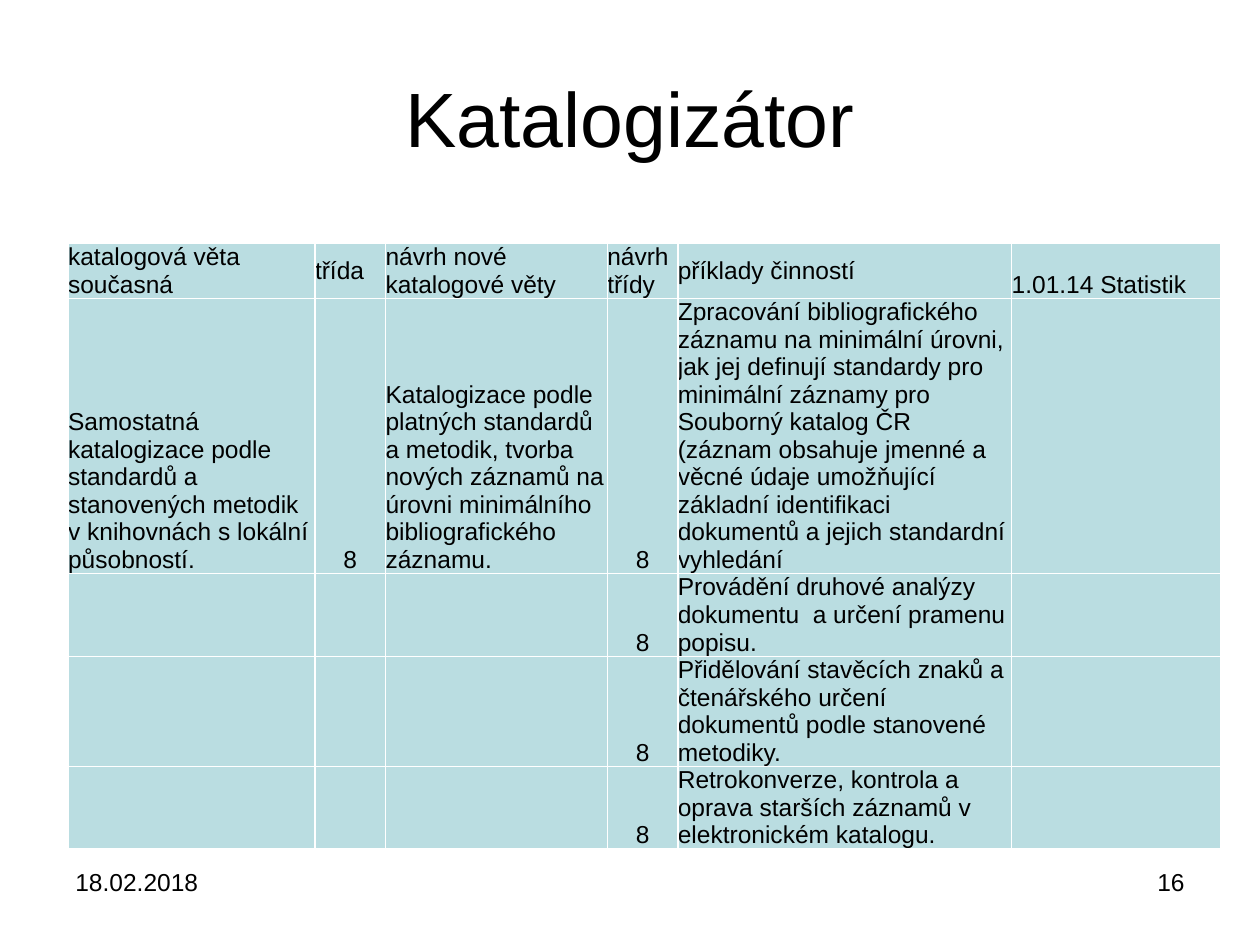
import pptx
import pptx.util
import pptx.dml.color
import pptx.enum.text
import pptx.oxml
import pptx.oxml.ns

Inches = pptx.util.Inches
ALIGN = pptx.enum.text.PP_ALIGN
ANCHOR = pptx.enum.text.MSO_ANCHOR

COLORS = {"text": "000000", "cell": "BADDE1", "border": "FFFFFF"}
FONT = "Arial"
COL_WIDTHS = [1.96, 0.56, 1.76, 0.56, 2.65, 1.66]
ROW_HEIGHTS = [0.43, 1.74, 0.65, 0.65, 0.65]
CLASS_COLS = (1, 3)
ROWS = [
    ["katalogová věta současná", "třída", "návrh nové katalogové věty",
     "návrh třídy", "příklady činností", "1.01.14 Statistik"],
    ["Samostatná katalogizace podle standardů a stanovených metodik "
     "v knihovnách s lokální působností.", "8",
     "Katalogizace podle platných standardů a metodik, tvorba nových záznamů "
     "na úrovni minimálního bibliografického záznamu.", "8",
     "Zpracování bibliografického záznamu na minimální úrovni, jak jej definují "
     "standardy pro minimální záznamy pro Souborný katalog ČR (záznam obsahuje "
     "jmenné a věcné údaje umožňující základní identifikaci dokumentů a jejich "
     "standardní vyhledání", ""],
    ["", "", "", "8",
     "Provádění druhové analýzy dokumentu  a určení pramenu popisu.", ""],
    ["", "", "", "8",
     "Přidělování stavěcích znaků a čtenářského určení dokumentů podle "
     "stanovené metodiky.", ""],
    ["", "", "", "8",
     "Retrokonverze, kontrola a oprava starších záznamů v elektronickém "
     "katalogu.", ""],
]


def rgb(name):
    return pptx.dml.color.RGBColor.from_string(COLORS[name])


def set_text(tf, text, size, align):
    tf.text = text
    p = tf.paragraphs[0]
    p.alignment = align
    for font in [p.font] + [r.font for r in p.runs]:
        font.name = FONT
        font.size = pptx.util.Pt(size)
        font.bold = False
        font.color.rgb = rgb("text")


def add_title(s, text):
    sp = s.shapes.title
    sp.left, sp.top, sp.width, sp.height = map(Inches, (0.5, 0.3, 9, 1.25))
    set_text(sp.text_frame, text, 44, ALIGN.CENTER)
    sp.text_frame.vertical_anchor = ANCHOR.MIDDLE


def add_footer(s, left, text, align):
    sp = s.shapes.add_textbox(Inches(left), Inches(6.83), Inches(2.33), Inches(0.52))
    sp.text_frame.word_wrap = True
    set_text(sp.text_frame, text, 14, align)


def set_borders(cell):
    tcPr = cell._tc.get_or_add_tcPr()
    for i, side in enumerate("LRTB"):
        ln = pptx.oxml.parse_xml(
            f'<a:ln{side} {pptx.oxml.ns.nsdecls("a")} w="12700"><a:solidFill>'
            f'<a:srgbClr val="{COLORS["border"]}"/></a:solidFill></a:ln{side}>')
        tcPr.insert(i, ln)


def format_cell(cell, text, row, col):
    centred = row > 0 and col in CLASS_COLS
    set_text(cell.text_frame, text, 14, ALIGN.CENTER if centred else ALIGN.LEFT)
    cell.margin_left = cell.margin_right = cell.margin_top = cell.margin_bottom = 0
    middle = row == 0 and col < len(COL_WIDTHS) - 1
    cell.vertical_anchor = ANCHOR.MIDDLE if middle else ANCHOR.BOTTOM
    cell.fill.solid()
    cell.fill.fore_color.rgb = rgb("cell")
    set_borders(cell)


def add_catalogue_table(s):
    table = s.shapes.add_table(
        len(ROWS), len(COL_WIDTHS), Inches(0.54), Inches(1.93),
        Inches(sum(COL_WIDTHS)), Inches(sum(ROW_HEIGHTS))).table
    table.first_row = table.horz_banding = False
    for column, width in zip(table.columns, COL_WIDTHS):
        column.width = Inches(width)
    for row, height in zip(table.rows, ROW_HEIGHTS):
        row.height = Inches(height)
    for i, texts in enumerate(ROWS):
        for j, text in enumerate(texts):
            format_cell(table.cell(i, j), text, i, j)


def main():
    prs = pptx.Presentation()
    prs.slide_width, prs.slide_height = Inches(10), Inches(7.5)
    s = prs.slides.add_slide(prs.slide_layouts[5])
    add_title(s, "Katalogizátor")
    add_catalogue_table(s)
    add_footer(s, 0.5, "18.02.2018", ALIGN.LEFT)
    add_footer(s, 7.17, "16", ALIGN.RIGHT)
    prs.save("out.pptx")


if __name__ == "__main__":
    main()
